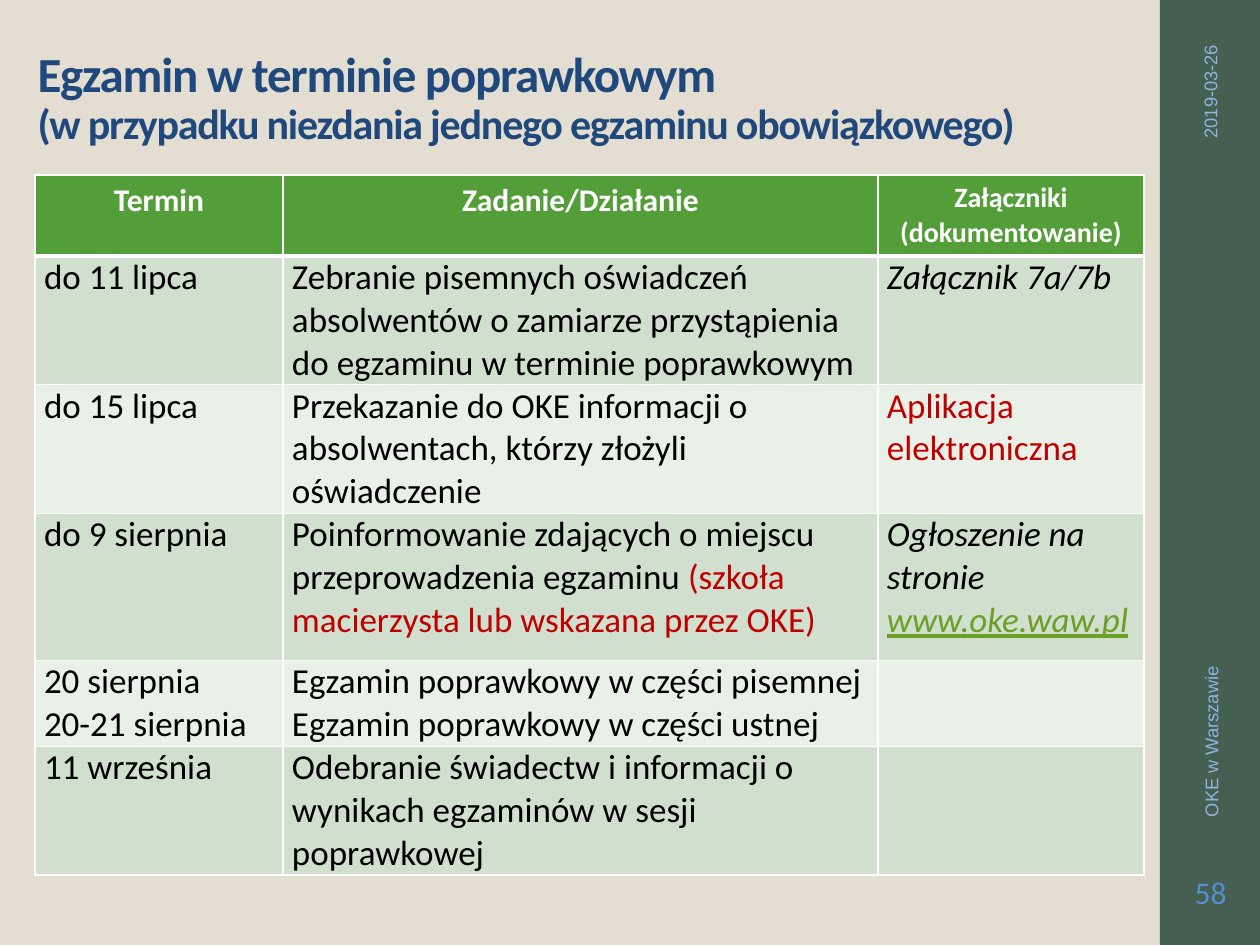
import pptx
import pptx.dml.color
import pptx.enum.shapes
import pptx.enum.text
import pptx.oxml
import pptx.oxml.ns
import pptx.util
from dataclasses import dataclass

PX = 914400 / 126
ALIGN = pptx.enum.text.PP_ALIGN
ANCHOR = pptx.enum.text.MSO_ANCHOR


@dataclass(frozen=True)
class Theme:
    background: str = "E3DED1"
    bar: str = "455F51"
    title: str = "1F497D"
    header: str = "549E39"
    band_dark: str = "D1DFCE"
    band_light: str = "E9F0E8"
    white: str = "FFFFFF"
    text: str = "000000"
    accent: str = "C00000"
    link: str = "6B9F25"
    footer: str = "8EB4E3"
    number: str = "558ED5"
    font: str = "Calibri"
    footer_font: str = "Arial"
    title_size: float = 28
    subtitle_size: float = 24
    header_size: float = 18
    small_header_size: float = 16
    body_size: float = 20
    footer_size: float = 10.5
    number_size: float = 18


T = Theme()

# Each cell is a list of paragraphs; each paragraph is a list of (text, style) runs.
PLAIN = {}
ITALIC = {"italic": True}
ACCENT = {"color": T.accent}
LINK = {"color": T.link, "italic": True, "underline": True}
SMALL = {"size": T.small_header_size}

COLUMNS = [248, 595, 266]
ROW_HEIGHTS = [80, 128, 128, 147, 86, 128]
HEADER = [
    [[("Termin", PLAIN)]],
    [[("Zadanie/Działanie", PLAIN)]],
    [[("Załączniki", SMALL)], [("(dokumentowanie)", SMALL)]],
]
SCHEDULE = [
    [
        [[("do 11 lipca", PLAIN)]],
        [[("Zebranie pisemnych oświadczeń absolwentów o zamiarze przystąpienia "
           "do egzaminu w terminie poprawkowym", PLAIN)]],
        [[("Załącznik 7a/7b", ITALIC)]],
    ],
    [
        [[("do 15 lipca", PLAIN)]],
        [[("Przekazanie do OKE informacji o absolwentach, którzy złożyli "
           "oświadczenie", PLAIN)]],
        [[("Aplikacja elektroniczna", ACCENT)]],
    ],
    [
        [[("do 9 sierpnia", PLAIN)]],
        [[("Poinformowanie zdających o miejscu przeprowadzenia egzaminu ", PLAIN),
          ("(szkoła macierzysta lub wskazana przez OKE)", ACCENT)]],
        [[("Ogłoszenie na stronie ", ITALIC), ("www.oke.waw.pl", LINK)]],
    ],
    [
        [[("20 sierpnia", PLAIN)], [("20-21 sierpnia", PLAIN)]],
        [[("Egzamin poprawkowy w części pisemnej", PLAIN)],
         [("Egzamin poprawkowy w części ustnej", PLAIN)]],
        [],
    ],
    [
        [[("11 września", PLAIN)]],
        [[("Odebranie świadectw i informacji o wynikach egzaminów w sesji "
           "poprawkowej", PLAIN)]],
        [],
    ],
]


def px(n):
    return pptx.util.Emu(round(n * PX))


def box(*lengths):
    return [px(n) for n in lengths]


def rgb(value):
    return pptx.dml.color.RGBColor.from_string(value)


def paint(fill, color):
    fill.solid()
    fill.fore_color.rgb = rgb(color)


def style_run(r, size, color, font=T.font, bold=False, italic=False, underline=False):
    r.font.size = pptx.util.Pt(size)
    r.font.name = font
    r.font.color.rgb = rgb(color)
    r.font.bold, r.font.italic, r.font.underline = bold, italic, underline


def add_bar(s):
    sp = s.shapes.add_shape(pptx.enum.shapes.MSO_SHAPE.RECTANGLE, *box(1160, 0, 100, 945))
    sp.shadow.inherit = False
    paint(sp.fill, T.bar)
    sp.line.fill.background()


def set_title(s, first, second):
    sp = s.shapes.title
    sp.left, sp.top, sp.width, sp.height = box(25, 36, 1111, 119)
    tf = sp.text_frame
    tf.word_wrap = True
    tf.auto_size = pptx.enum.text.MSO_AUTO_SIZE.NONE
    tf.vertical_anchor = ANCHOR.BOTTOM
    p = tf.paragraphs[0]
    p.text = f"{first}\v{second}"
    p.alignment = ALIGN.LEFT
    p.line_spacing = 0.9
    for r, size in zip(p.runs, (T.title_size, T.subtitle_size)):
        style_run(r, size, T.title, bold=True)
        r.font._element.set("spc", "-70")


def add_label(s, text, at, size, color, font, align, rotation=0, side=13):
    sp = s.shapes.add_textbox(*box(*at))
    sp.rotation = rotation
    tf = sp.text_frame
    tf.word_wrap = True
    tf.vertical_anchor = ANCHOR.MIDDLE
    tf.margin_left = tf.margin_right = px(side)
    tf.text = text
    p = tf.paragraphs[0]
    p.alignment = align
    style_run(p.runs[0], size, color, font)


def set_borders(cell, bottom):
    """Draw white borders; call before the fill, which must follow them in the XML."""
    tc_pr = cell._tc.get_or_add_tcPr()
    for side, width in (("L", 1), ("R", 1), ("T", 1), ("B", bottom)):
        tc_pr.append(pptx.oxml.parse_xml(
            f'<a:ln{side} {pptx.oxml.ns.nsdecls("a")} w="{pptx.util.Pt(width)}">'
            f'<a:solidFill><a:srgbClr val="{T.white}"/></a:solidFill></a:ln{side}>'))


def fill_cell(cell, paragraphs, fill, base, align=ALIGN.LEFT, bottom=1):
    set_borders(cell, bottom)
    paint(cell.fill, fill)
    tf = cell.text_frame
    for i, runs in enumerate(paragraphs):
        p = tf.add_paragraph() if i else tf.paragraphs[0]
        p.alignment = align
        for text, style in runs:
            r = p.add_run()
            r.text = text
            style_run(r, **{**base, **style})


def add_schedule(s):
    table = s.shapes.add_table(
        len(ROW_HEIGHTS), len(COLUMNS),
        *box(35, 175, sum(COLUMNS), sum(ROW_HEIGHTS))).table
    for column, width in zip(table.columns, COLUMNS):
        column.width = px(width)
    for row, height in zip(table.rows, ROW_HEIGHTS):
        row.height = px(height)

    head = {"size": T.header_size, "color": T.white, "bold": True}
    for c, paragraphs in enumerate(HEADER):
        fill_cell(table.cell(0, c), paragraphs, T.header, head, ALIGN.CENTER, bottom=3)

    body = {"size": T.body_size, "color": T.text}
    for i, row in enumerate(SCHEDULE):
        for c, paragraphs in enumerate(row):
            cell = table.cell(i + 1, c)
            cell.margin_left = cell.margin_right = px(9)
            cell.margin_top = cell.margin_bottom = 0
            fill_cell(cell, paragraphs, T.band_light if i % 2 else T.band_dark, body)


def main():
    prs = pptx.Presentation()
    prs.slide_width, prs.slide_height = box(1260, 945)
    s = prs.slides.add_slide(prs.slide_layouts[5])
    paint(s.background.fill, T.background)
    add_bar(s)
    set_title(s, "Egzamin w terminie poprawkowym ",
              "(w przypadku niezdania jednego egzaminu obowiązkowego)")
    add_schedule(s)
    footer = (T.footer_size, T.footer, T.footer_font)
    add_label(s, "2019-03-26", (1079, 144, 262, 38), *footer, ALIGN.RIGHT, 270)
    add_label(s, "OKE w Warszawie", (964, 564, 494, 38), *footer, ALIGN.LEFT, 270)
    add_label(s, "58", (1163, 851, 95, 82), T.number_size, T.number, T.font,
              ALIGN.CENTER, side=4)
    prs.save("out.pptx")


if __name__ == "__main__":
    main()
